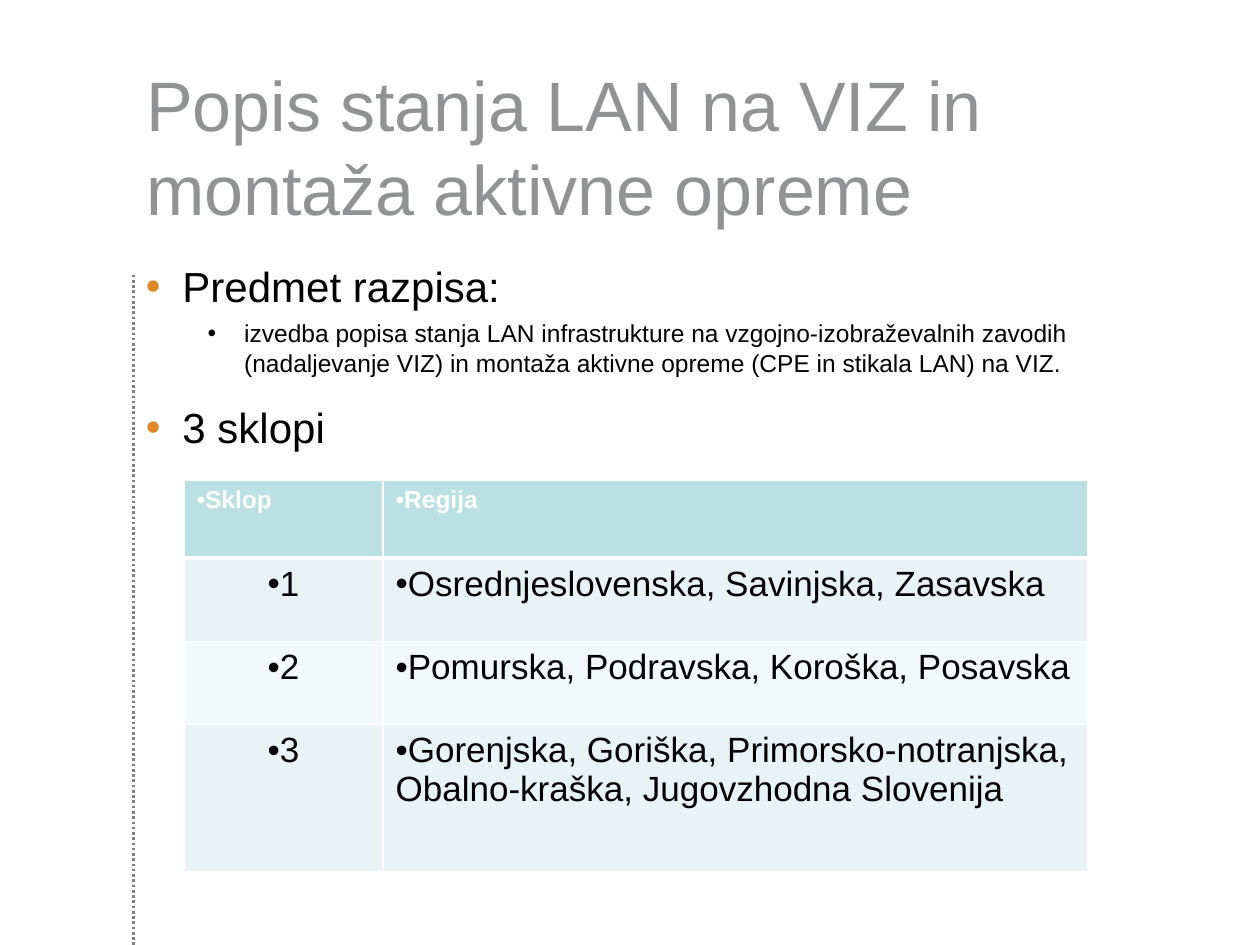
"""Build the slide on the LAN survey tender, with its table of regions."""
from lxml import etree
from pptx import Presentation, util as u
from pptx.dml.color import RGBColor
from pptx.enum import dml, shapes, text
from pptx.oxml import ns


def tint(code):
    return RGBColor.from_string(code)


def write(par, words, size, ink, dot, left=0, hang=0, bold=False):
    props = par._p.get_or_add_pPr()
    props.set("marL", str(int(left)))
    props.set("indent", str(int(-hang)))
    shade = etree.SubElement(props, ns.qn("a:buClr"))
    etree.SubElement(shade, ns.qn("a:srgbClr"), val=dot)
    etree.SubElement(props, ns.qn("a:buFont"), typeface="Arial")
    etree.SubElement(props, ns.qn("a:buChar"), char="•")
    run = par.add_run()
    run.text = words
    run.font.name = "Arial"
    run.font.size = u.Pt(size)
    run.font.bold = bold
    run.font.color.rgb = tint(ink)


deck = Presentation()
deck.slide_width, deck.slide_height = u.Inches(10), u.Inches(7.5)
col, row = deck.slide_width / 100, deck.slide_height / 75
slide = deck.slides.add_slide(deck.slide_layouts[5])
edge = int(10.6 * col)

rule = slide.shapes.add_connector(
    shapes.MSO_CONNECTOR.STRAIGHT, edge, int(21.8 * row), edge, deck.slide_height)
rule.line.color.rgb = tint("808080")
rule.line.width = u.Pt(1.5)
rule.line.dash_style = dml.MSO_LINE.ROUND_DOT
etree.SubElement(rule._element.spPr, ns.qn("a:effectLst"))

title = slide.shapes.title
title.left, title.top = edge, int(5.3 * row)
title.width, title.height = int(86.1 * col), int(12.5 * row)
frame = title.text_frame
frame.auto_size = text.MSO_AUTO_SIZE.NONE
frame.vertical_anchor = text.MSO_ANCHOR.MIDDLE
head = frame.paragraphs[0]
head.alignment = text.PP_ALIGN.LEFT
run = head.add_run()
run.text = "Popis stanja LAN na VIZ in montaža aktivne opreme"
run.font.name = "Arial"
run.font.size = u.Pt(40)
run.font.color.rgb = tint("919293")

body = slide.shapes.add_textbox(
    edge, int(20.2 * row), int(82.7 * col), int(46.8 * row)).text_frame
body.word_wrap = True
points = [
    ("Predmet razpisa:", 24, "DD8729", 2.9, 0),
    ("izvedba popisa stanja LAN infrastrukture na vzgojno-izobraževalnih zavodih "
     "(nadaljevanje VIZ) in montaža aktivne opreme (CPE in stikala LAN) na VIZ.",
     14, "000000", 7.8, 4),
    ("3 sklopi", 24, "DD8729", 2.9, 14),
]
for i, (words, size, dot, left, gap) in enumerate(points):
    par = body.add_paragraph() if i else body.paragraphs[0]
    if gap:
        par.space_before = u.Pt(gap)
    write(par, words, size, "000000", dot, left * col, 2.9 * col)

lots = [
    ("Sklop", "Regija"),
    ("1", "Osrednjeslovenska, Savinjska, Zasavska"),
    ("2", "Pomurska, Podravska, Koroška, Posavska"),
    ("3", "Gorenjska, Goriška, Primorsko-notranjska, Obalno-kraška, Jugovzhodna Slovenija"),
]
fills = ["BBE0E3", "E7F3F4", "F3F9FA", "E7F3F4"]
table = slide.shapes.add_table(
    4, 2, int(14.6 * col), int(38.1 * row), int(71.7 * col), int(31.1 * row)).table
for j, wide in enumerate([15.8, 55.9]):
    table.columns[j].width = int(wide * col)
for i, tall in enumerate([6.2, 6.6, 6.6, 11.7]):
    table.rows[i].height = int(tall * row)
    for j, words in enumerate(lots[i]):
        cell = table.cell(i, j)
        par = cell.text_frame.paragraphs[0]
        ink = "000000" if i else "FFFFFF"
        write(par, words, 20 if i else 14, ink, ink, bold=not i)
        if i and not j:
            par.alignment = text.PP_ALIGN.CENTER
        props = cell._tc.get_or_add_tcPr()
        for side in "LRTB":
            thick = 3 if (i, side) in [(0, "B"), (1, "T")] else 1
            line = etree.SubElement(props, ns.qn("a:ln" + side), w=str(u.Pt(thick)))
            solid = etree.SubElement(line, ns.qn("a:solidFill"))
            etree.SubElement(solid, ns.qn("a:srgbClr"), val="FFFFFF")
        cell.fill.solid()
        cell.fill.fore_color.rgb = tint(fills[i])

deck.save("out.pptx")
